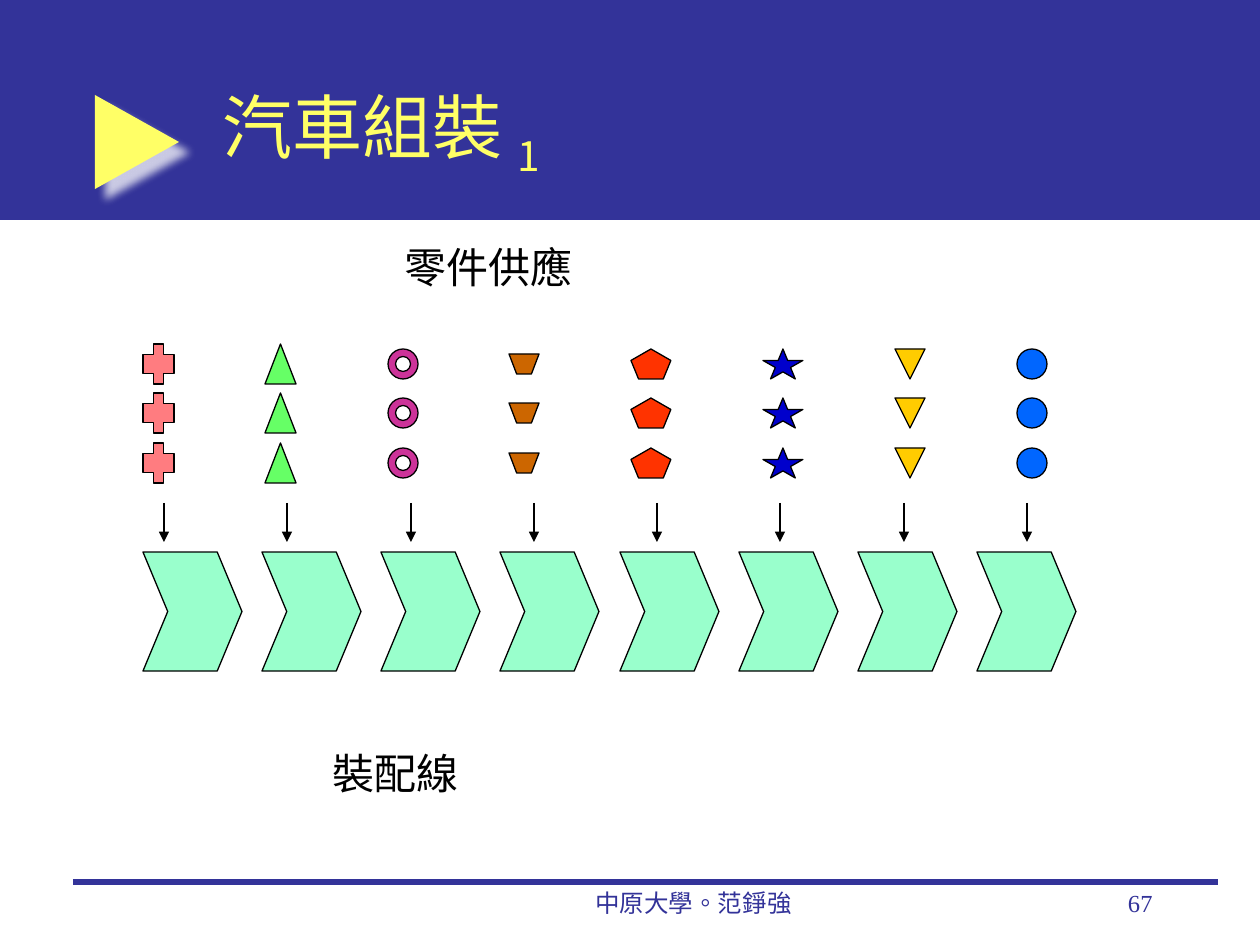
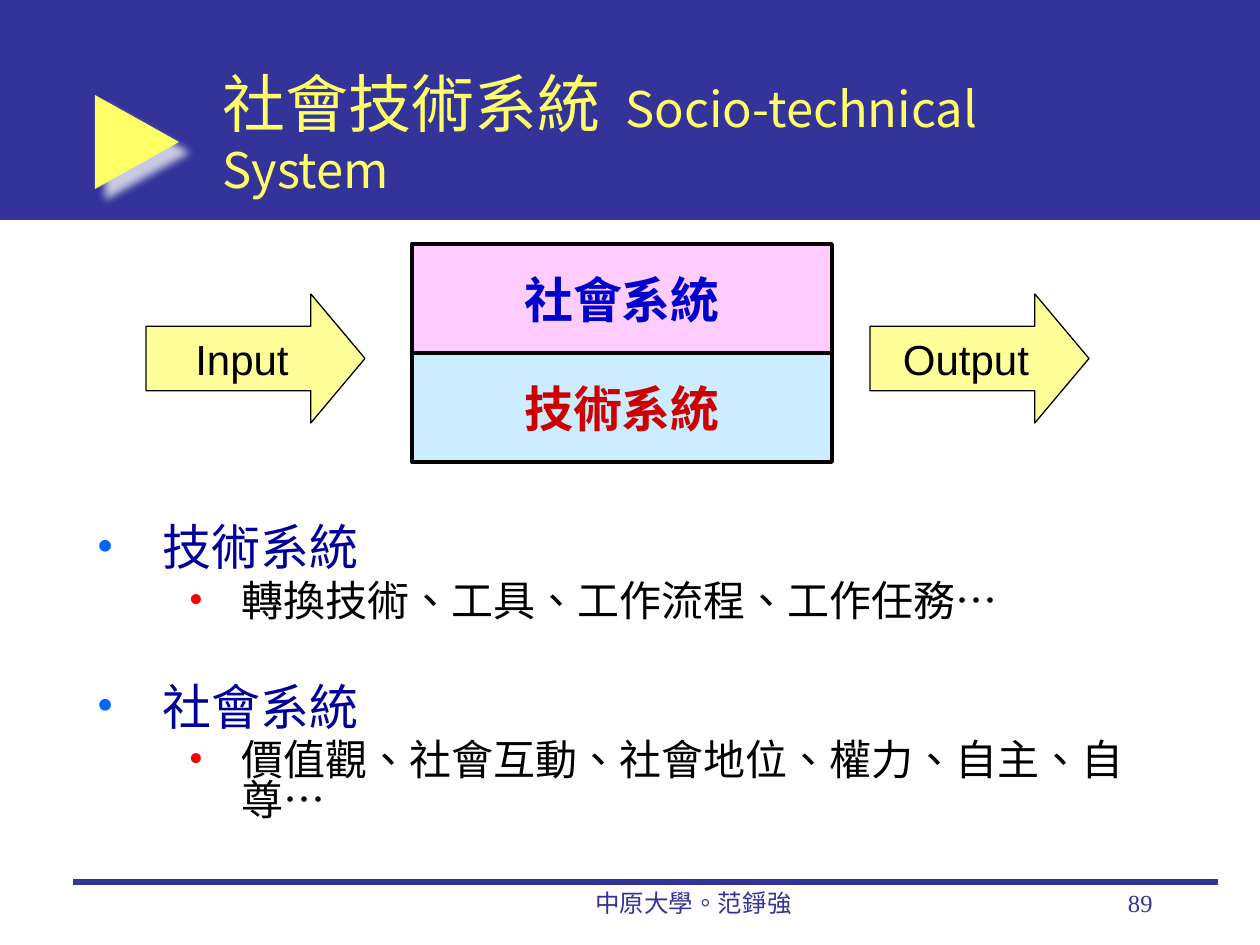
from dataclasses import dataclass
from typing import Any, Optional

from lxml.etree import SubElement
from pptx import Presentation
from pptx.dml.color import RGBColor
from pptx.enum.shapes import MSO_CONNECTOR as Link, MSO_SHAPE as Preset
from pptx.enum.text import MSO_ANCHOR as Anchor, MSO_AUTO_SIZE as AutoSize, PP_ALIGN as Align
from pptx.oxml.ns import qn
from pptx.util import Emu, Pt

# Scale: 126 px to the inch
EMU_PER_PX = 914400 / 126

# Colours
NAVY = RGBColor(0x33, 0x33, 0x99)
YELLOW = RGBColor(0xFF, 0xFF, 0x66)
BLACK = RGBColor(0x00, 0x00, 0x00)
MINT = RGBColor(0x99, 0xFF, 0xCC)
SALMON = RGBColor(0xFF, 0x7C, 0x80)
GREEN = RGBColor(0x66, 0xFF, 0x66)
MAGENTA = RGBColor(0xCC, 0x33, 0x99)
BROWN = RGBColor(0xCC, 0x66, 0x00)
ORANGE_RED = RGBColor(0xFF, 0x33, 0x00)
BLUE = RGBColor(0x00, 0x00, 0xCC)
GOLD = RGBColor(0xFF, 0xCC, 0x00)
AZURE = RGBColor(0x00, 0x66, 0xFF)
PALE_YELLOW = RGBColor(0xFF, 0xFF, 0x99)
PINK = RGBColor(0xFF, 0xCC, 0xFF)
SKY = RGBColor(0xCC, 0xEC, 0xFF)
DARK_BLUE = RGBColor(0x00, 0x00, 0x99)
DARK_RED = RGBColor(0xCC, 0x00, 0x00)
RED = RGBColor(0xFF, 0x00, 0x00)

# Fonts
SERIF = "Times New Roman"
SANS = "Arial"
CJK = "Noto Sans CJK SC"


@dataclass(frozen=True)
class Box:
    left: int
    top: int
    width: int
    height: int

    def emu(self) -> list[Emu]:
        return [px(n) for n in (self.left, self.top, self.width, self.height)]


@dataclass(frozen=True)
class Style:
    size: int
    color: RGBColor
    font: str = SERIF
    bold: bool = False


@dataclass(frozen=True)
class Part:
    preset: Preset
    left: int
    width: int
    height: int
    fill: RGBColor
    adjust: tuple[float, ...] = ()
    turn: int = 0


@dataclass(frozen=True)
class Block:
    text: str
    preset: Preset
    box: Box
    fill: RGBColor
    style: Style
    border: float = 0.75
    adjust: tuple[float, ...] = ()


@dataclass(frozen=True)
class Level:
    depth: int
    margin: int
    hanging: int
    bullet: RGBColor
    style: Style


# Shared text styles
TITLE = Style(40, YELLOW, CJK)
FOOTER = Style(14, NAVY)
LABEL = Style(24, BLACK)
FLOW = Style(24, BLACK, SANS)

# Car assembly: parts and line
PARTS = [
    Part(Preset.CROSS, 143, 31, 40, SALMON, (0.33,)),
    Part(Preset.ISOSCELES_TRIANGLE, 265, 31, 40, GREEN),
    Part(Preset.DONUT, 388, 30, 30, MAGENTA, (0.25,)),
    Part(Preset.TRAPEZOID, 509, 30, 20, BROWN, (0.38,), 180),
    Part(Preset.REGULAR_PENTAGON, 631, 40, 30, ORANGE_RED),
    Part(Preset.STAR_5_POINT, 763, 40, 30, BLUE),
    Part(Preset.FLOWCHART_MERGE, 895, 30, 30, GOLD),
    Part(Preset.OVAL, 1017, 30, 30, AZURE),
]
SUPPLY_ROWS = [364, 413, 463]

# Socio-technical system: flow and outline
SYSTEMS = [("社會系統", PINK, BLUE), ("技術系統", SKY, DARK_RED)]
FLOWS = [("Input", 146), ("Output", 870)]
HEADING = Level(0, 66, 66, AZURE, Style(28, DARK_BLUE))
DETAIL = Level(1, 145, 53, RED, LABEL)
OUTLINE = [
    (HEADING, "技術系統", 0),
    (DETAIL, "轉換技術、工具、工作流程、工作任務…", 5),
    (HEADING, "社會系統", 36),
    (DETAIL, "價值觀、社會互動、社會地位、權力、自主、自尊…", 5),
]


def px(length: float) -> Emu:
    return Emu(round(length * EMU_PER_PX))


def spread(first: int, last: int, count: int) -> list[int]:
    return [round(first + (last - first) * i / (count - 1)) for i in range(count)]


def apply(target: Any, values: dict[str, Any]) -> None:
    for name, value in values.items():
        setattr(target, name, value)


def add_run(paragraph: Any, text: str, style: Style, **extra: str) -> None:
    """Add styled text; extra values go on the run properties."""
    run = paragraph.add_run()
    run.text = text
    apply(run.font, {"size": Pt(style.size), "name": style.font, "bold": style.bold})
    run.font.color.rgb = style.color
    properties = run._r.get_or_add_rPr()
    for name, value in {"lang": "zh-TW", **extra}.items():
        properties.set(name, value)
    properties.find(qn("a:latin")).addnext(
        properties.makeelement(qn("a:ea"), {"typeface": CJK}))


def add_text(slide: Any, text: str, box: Box, style: Style,
             align: Align = Align.LEFT, wrap: bool = True) -> None:
    frame = slide.shapes.add_textbox(*box.emu()).text_frame
    apply(frame, {"word_wrap": wrap,
                  "auto_size": AutoSize.NONE if wrap else AutoSize.SHAPE_TO_FIT_TEXT})
    frame.paragraphs[0].alignment = align
    add_run(frame.paragraphs[0], text, style)


def add_figure(slide: Any, preset: Preset, box: Box, fill: RGBColor,
               border: Optional[float] = 0.75, adjust: tuple[float, ...] = ()) -> Any:
    figure = slide.shapes.add_shape(preset, *box.emu())
    figure.shadow.inherit = False
    figure.fill.solid()
    figure.fill.fore_color.rgb = fill
    if border is None:
        figure.line.fill.background()
    else:
        figure.line.color.rgb = BLACK
        figure.line.width = Pt(border)
    for i, value in enumerate(adjust):
        figure.adjustments[i] = value
    return figure


def add_line(slide: Any, start: tuple[int, int], end: tuple[int, int],
             color: RGBColor, width: float, arrow: bool = False) -> Any:
    line = slide.shapes.add_connector(Link.STRAIGHT, *[px(n) for n in start + end])
    line.line.color.rgb = color
    line.line.width = Pt(width)
    if arrow:
        SubElement(line.line._get_or_add_ln(), qn("a:tailEnd"), type="triangle")
    SubElement(line.element.spPr, qn("a:effectLst"))
    return line


def add_block(slide: Any, block: Block) -> None:
    figure = add_figure(slide, block.preset, block.box, block.fill, block.border, block.adjust)
    frame = figure.text_frame
    apply(frame, {"word_wrap": False, "vertical_anchor": Anchor.MIDDLE})
    frame.paragraphs[0].alignment = Align.CENTER
    add_run(frame.paragraphs[0], block.text, block.style)


def place(placeholder: Any, box: Box, anchor: Anchor) -> Any:
    apply(placeholder, dict(zip(("left", "top", "width", "height"), box.emu())))
    frame = placeholder.text_frame
    apply(frame, {"word_wrap": True, "auto_size": AutoSize.NONE, "vertical_anchor": anchor})
    return frame


def decorate_master(prs: Any, slide: Any) -> None:
    """Build band, pointer and rule, then move them behind the master's placeholders."""
    band = add_figure(slide, Preset.RECTANGLE, Box(0, 0, 1260, 220), NAVY, None)
    pointer = add_figure(slide, Preset.RIGHT_ARROW, Box(95, 95, 84, 94), YELLOW, None, (0.38, 1))
    glow = SubElement(pointer.element.spPr.find(qn("a:effectLst")), qn("a:outerShdw"),
                      blurRad=str(Pt(5)), dist=str(Pt(8.5)), dir="2700000",
                      algn="ctr", rotWithShape="0")
    white = SubElement(glow, qn("a:srgbClr"), val="FFFFFF")
    SubElement(white, qn("a:alpha"), val="75000")
    rule = add_line(slide, (73, 882), (1218, 882), NAVY, 3)
    tree = prs.slide_master.shapes.element
    for i, figure in enumerate((band, pointer, rule)):
        figure.element.xpath("./*/p:cNvPr")[0].set("id", str(101 + i))
        tree.insert(2 + i, figure.element)


def start_slide(prs: Any, layout: int, number: str) -> tuple[Any, Any]:
    """Add a slide with its footer; return it and its title paragraph."""
    slide = prs.slides.add_slide(prs.slide_layouts[layout])
    title = place(slide.shapes.title, Box(210, 53, 955, 157), Anchor.MIDDLE).paragraphs[0]
    title.alignment = Align.LEFT
    add_text(slide, "中原大學。范錚強", Box(494, 882, 399, 63), FOOTER, Align.CENTER)
    add_text(slide, number, Box(903, 882, 262, 63), FOOTER, Align.RIGHT)
    return slide, title


def build_assembly(prs: Any) -> Any:
    slide, title = start_slide(prs, 5, "67")
    add_run(title, "汽車組裝 ", TITLE)
    add_run(title, "1", TITLE, baseline="-25000")

    # Assembly line
    for left in spread(143, 977, len(PARTS)):
        add_figure(slide, Preset.CHEVRON, Box(left, 552, 99, 119), MINT, adjust=(0.25,))
    add_text(slide, "裝配線", Box(320, 741, 151, 63), LABEL, wrap=False)

    # Supply arrows
    for x in spread(164, 1027, len(PARTS)):
        add_line(slide, (x, 503), (x, 542), BLACK, 0.75, arrow=True)
    add_text(slide, "零件供應", Box(392, 235, 193, 63), LABEL, wrap=False)

    # Stacked parts
    for middle in SUPPLY_ROWS:
        for part in PARTS:
            box = Box(part.left, middle - part.height // 2, part.width, part.height)
            figure = add_figure(slide, part.preset, box, part.fill, adjust=part.adjust)
            figure.rotation = part.turn
    return slide


def build_system(prs: Any) -> None:
    slide, title = start_slide(prs, 1, "89")
    chinese = Style(36, YELLOW, CJK)
    add_run(title, "社會技術系統", chinese)
    add_run(title, " ", chinese, spc="630")
    add_run(title, "Socio-technical System", Style(28, YELLOW, CJK))

    # Outline
    frame = place(slide.placeholders[1], Box(84, 522, 1071, 328), Anchor.TOP)
    for i, (level, text, before) in enumerate(OUTLINE):
        paragraph = frame.add_paragraph() if i else frame.paragraphs[0]
        apply(paragraph, {"level": level.depth, "line_spacing": 0.8,
                          "space_before": Pt(before)})
        properties = paragraph._p.get_or_add_pPr()
        properties.set("marL", str(px(level.margin)))
        properties.set("indent", str(px(-level.hanging)))
        color = SubElement(properties, qn("a:buClr"))
        SubElement(color, qn("a:srgbClr"), val=str(level.bullet))
        SubElement(properties, qn("a:buFont"), typeface=SERIF)
        SubElement(properties, qn("a:buChar"), char="•")
        add_run(paragraph, text, level.style)

    # Process halves, then the flow in and out
    for i, (text, fill, color) in enumerate(SYSTEMS):
        add_block(slide, Block(text, Preset.RECTANGLE, Box(412, 244 + 109 * i, 420, 109),
                               fill, Style(28, color, bold=True), 2.25))
    for text, left in FLOWS:
        add_block(slide, Block(text, Preset.RIGHT_ARROW, Box(left, 294, 219, 129),
                               PALE_YELLOW, FLOW, adjust=(0.5, 0.42)))


def main() -> None:
    prs = Presentation()
    prs.slide_width, prs.slide_height = px(1260), px(945)
    decorate_master(prs, build_assembly(prs))
    build_system(prs)
    prs.save("out.pptx")


if __name__ == "__main__":
    main()
